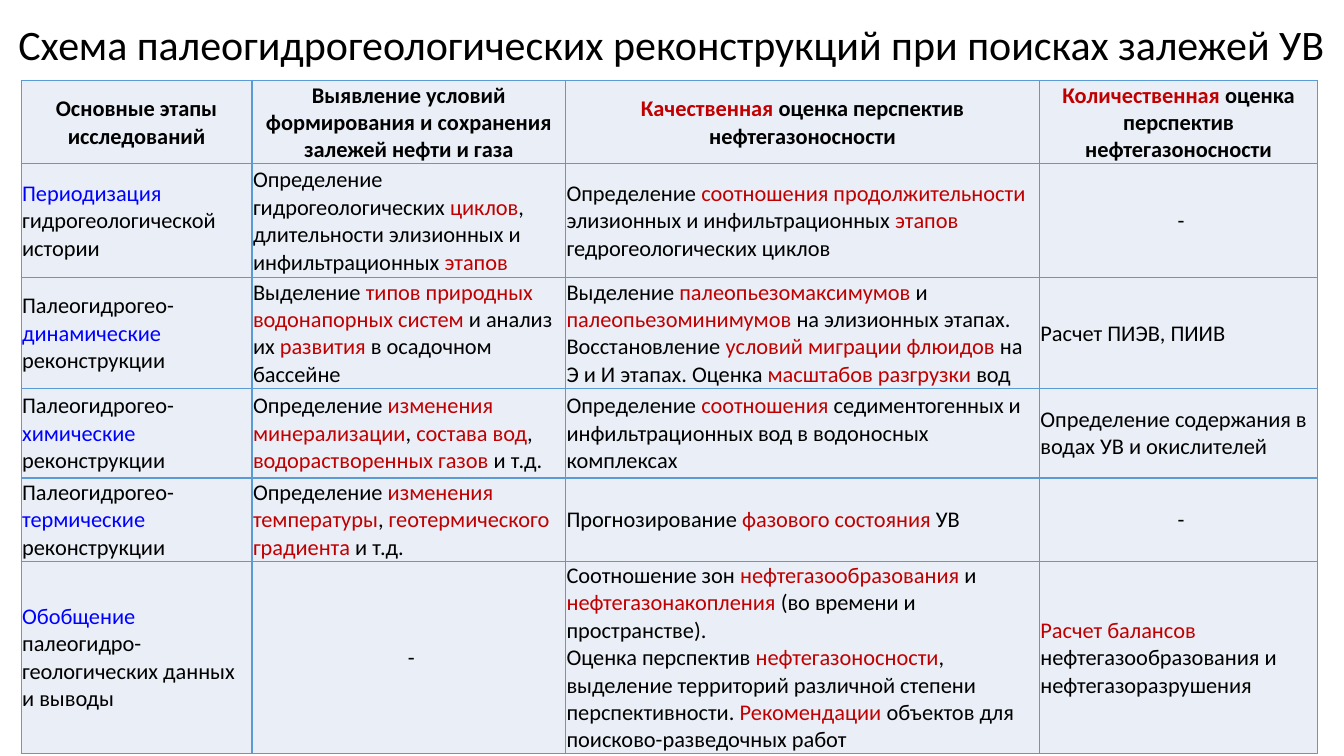
from dataclasses import dataclass

from lxml import etree
from pptx import Presentation
from pptx.dml.color import RGBColor
from pptx.enum.text import MSO_ANCHOR, PP_ALIGN
from pptx.oxml.ns import qn
from pptx.util import Pt

CENTER, LEFT = PP_ALIGN.CENTER, PP_ALIGN.LEFT
MIDDLE = MSO_ANCHOR.MIDDLE
PX = 9144

TITLE = "Схема палеогидрогеологических реконструкций при поисках залежей УВ"
DASH = " -"
COLUMNS = [229, 311, 470, 276]
HEIGHTS = [68, 113, 98, 89, 78, 125]
STAGES = [
    [
        "Основные этапы исследований",
        "Выявление условий формирования и сохранения залежей нефти и газа",
        "*Качественная| оценка перспектив нефтегазоносности",
        "*Количественная| оценка перспектив нефтегазоносности",
    ],
    [
        "~Периодизация |гидрогеологической истории",
        "Определение гидрогеологических |*циклов|, длительности элизионных "
        "и инфильтрационных |*этапов",
        "Определение |*соотношения продолжительности |элизионных и "
        "инфильтрационных |*этапов |гедрогеологических циклов",
        DASH,
    ],
    [
        "Палеогидрогео-|~динамические| реконструкции",
        "Выделение |*типов природных водонапорных систем |и анализ их "
        "|*развития| в осадочном бассейне",
        "Выделение |*палеопьезомаксимумов| и |*палеопьезоминимумов "
        "|на элизионных этапах.\n"
        "Восстановление |*условий миграции флюидов |на Э и И этапах. Оценка "
        "|*масштабов разгрузки |вод",
        "Расчет ПИЭВ, ПИИВ",
    ],
    [
        "Палеогидрогео-|~химические |реконструкции",
        "Определение |*изменения минерализации|, |*состава вод|, "
        "|*водорастворенных газов |и т.д.",
        "Определение |*соотношения |седиментогенных и инфильтрационных вод "
        "в водоносных комплексах",
        "Определение содержания в водах УВ и окислителей",
    ],
    [
        "Палеогидрогео- |~термические| реконструкции",
        "Определение |*изменения температуры|, |*геотермического градиента"
        "| и т.д.",
        "Прогнозирование |*фазового состояния |УВ",
        DASH,
    ],
    [
        "~Обобщение |палеогидро-геологических данных и выводы",
        DASH,
        "Соотношение зон |*нефтегазообразования| и |*нефтегазонакопления"
        "| (во времени и пространстве).\n"
        "Оценка перспектив |*нефтегазоносности|, выделение территорий "
        "различной степени перспективности. |*Рекомендации"
        "| объектов для поисково-разведочных работ",
        "*Расчет балансов |нефтегазообразования и нефтегазоразрушения",
    ],
]


@dataclass(frozen=True)
class Theme:
    """Colours, font and type sizes of the slide."""

    font: str = "Calibri"
    ink: str = "000000"
    red: str = "C00000"
    blue: str = "0000FF"
    fill: str = "EAEFF7"
    border: str = "5B9BD5"
    title_size: int = 30
    body_size: int = 16


def apply(target, values):
    """Set every attribute named in a dict of format values."""
    for name, value in values.items():
        setattr(target, name, value)


class SlideBuilder:
    """Draws styled elements on the current slide."""

    def __init__(self, page, theme):
        """Keep the slide and its theme."""
        self.page = page
        self.theme = theme

    def add_text(self, frame, text, size, align, bold=False, spacing=None):
        """Fill a frame with paragraphs; * marks a red span and ~ a blue one."""
        marks = {"*": self.theme.red, "~": self.theme.blue}
        for index, line in enumerate(text.split("\n")):
            para = frame.add_paragraph() if index else frame.paragraphs[0]
            apply(para, {"alignment": align, "line_spacing": spacing})
            for chunk in line.split("|"):
                span = para.add_run()
                span.text = chunk.lstrip("*~")
                apply(span.font, {"name": self.theme.font, "size": Pt(size), "bold": bold})
                color = marks.get(chunk[0], self.theme.ink)
                span.font.color.rgb = RGBColor.from_string(color)

    def title(self, text, left, top, width, height):
        """Add the centred slide heading."""
        box = self.page.shapes.add_textbox(left * PX, top * PX, width * PX, height * PX)
        apply(box.text_frame, {"word_wrap": True, "vertical_anchor": MIDDLE})
        self.add_text(box.text_frame, text, self.theme.title_size, CENTER, spacing=Pt(40))

    def borders(self, cell):
        """Outline a cell on all four sides."""
        properties = cell._tc.get_or_add_tcPr()
        for index, side in enumerate(("lnL", "lnR", "lnT", "lnB")):
            line = etree.Element(qn(f"a:{side}"), w=str(Pt(1)))
            fill = etree.SubElement(line, qn("a:solidFill"))
            etree.SubElement(fill, qn("a:srgbClr"), val=self.theme.border)
            properties.insert(index, line)

    def cell(self, cell, text, heading):
        """Fill and outline one table cell and set its text."""
        apply(cell, {
            "vertical_anchor": MIDDLE,
            "margin_left": PX,
            "margin_right": PX,
            "margin_top": PX,
            "margin_bottom": 0,
        })
        cell.fill.solid()
        cell.fill.fore_color.rgb = RGBColor.from_string(self.theme.fill)
        self.borders(cell)
        align = CENTER if heading or text == DASH else LEFT
        self.add_text(cell.text_frame, text, self.theme.body_size, align, bold=heading)

    def table(self, rows, left, top, widths, heights):
        """Add the table with a bold heading row."""
        frame = self.page.shapes.add_table(
            len(rows), len(widths), left * PX, top * PX, sum(widths) * PX, sum(heights) * PX
        )
        table = frame.table
        apply(table, {"first_row": False, "horz_banding": False})
        for column, width in zip(table.columns, widths):
            column.width = width * PX
        for index, (row, height, texts) in enumerate(zip(table.rows, heights, rows)):
            row.height = height * PX
            for cell, text in zip(row.cells, texts):
                self.cell(cell, text, heading=index == 0)


def main():
    """Build and save the deck."""
    deck = Presentation()
    apply(deck, {"slide_width": 1333 * PX, "slide_height": 750 * PX})
    page = deck.slides.add_slide(deck.slide_layouts[6])
    builder = SlideBuilder(page, Theme())
    builder.table(STAGES, 21, 80, COLUMNS, HEIGHTS)
    builder.title(TITLE, 0, 6, 1333, 70)
    deck.save("out.pptx")


if __name__ == "__main__":
    main()
